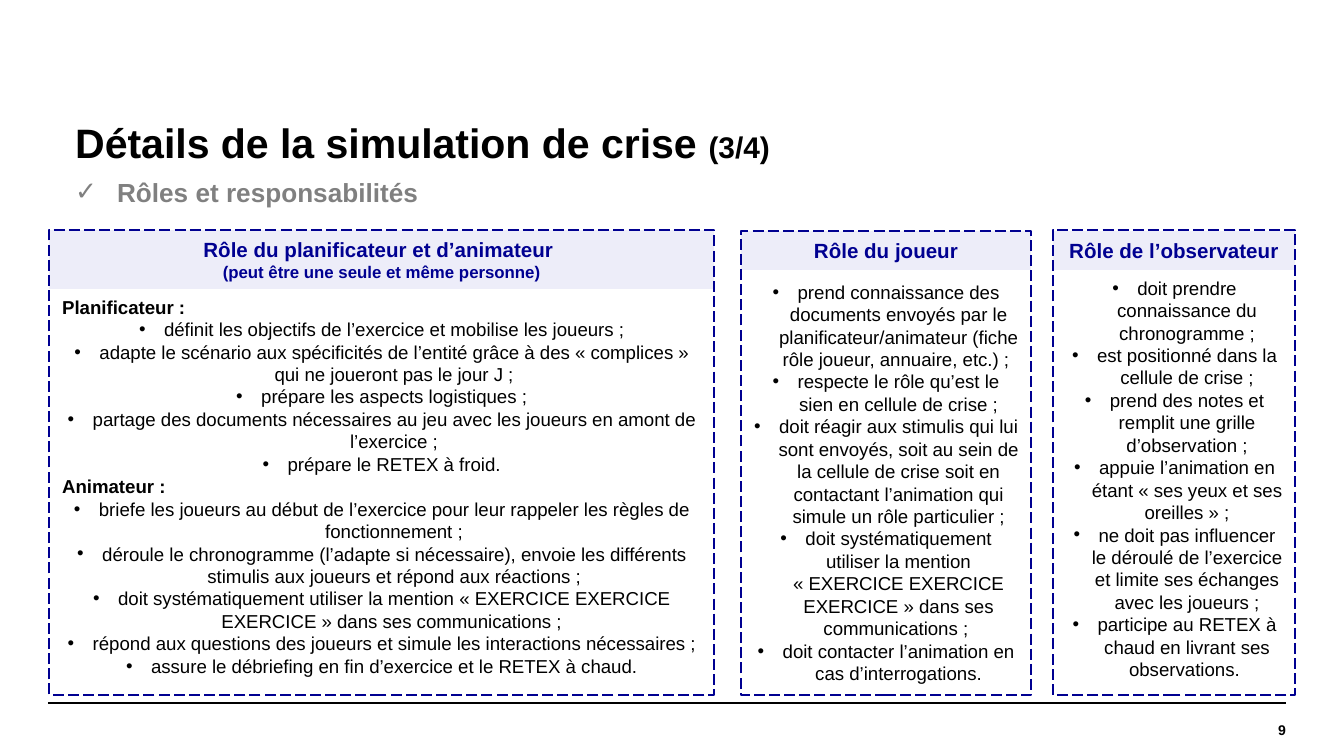
from dataclasses import dataclass

from lxml.etree import SubElement
from pptx import Presentation
from pptx.dml.color import RGBColor
from pptx.enum.dml import MSO_LINE
from pptx.enum.shapes import MSO_CONNECTOR, MSO_SHAPE
from pptx.enum.text import MSO_ANCHOR, PP_ALIGN
from pptx.oxml.ns import qn
from pptx.util import Emu, Pt

BLACK = RGBColor(0x00, 0x00, 0x00)
GREY = RGBColor(0x80, 0x80, 0x80)
NAVY = RGBColor(0x00, 0x00, 0x91)
LAVENDER = RGBColor(0xED, 0xED, 0xF9)
FONT = "Arial"
EMU_PER_PX = 914400 / 134.4
BULLET_INDENT = 25
NO_BREAK_SPACE = chr(160)


def quoted(text: str) -> str:
    """French quotation marks, kept on the line of the words they enclose."""
    return f"«{NO_BREAK_SPACE}{text}{NO_BREAK_SPACE}»"


MENTION_DUTY = (
    f"doit systématiquement utiliser la mention {quoted('EXERCICE EXERCICE EXERCICE')} "
    "dans ses communications ; "
)


@dataclass
class Run:
    text: str
    size: float
    color: RGBColor = BLACK
    bold: bool = True


@dataclass
class Box:
    left: int
    top: int
    width: int
    height: int


@dataclass
class Role:
    frame: Box
    header: Box
    body: Box
    titles: list[Run]
    sections: list[tuple[str, list[str]]]  # heading (may be empty), duties


ROLES = [
    Role(
        Box(49, 230, 665, 465), Box(49, 230, 665, 59), Box(49, 289, 665, 398),
        [Run("Rôle du planificateur et d’animateur ", 11, NAVY),
         Run("(peut être une seule et même personne)", 9, NAVY)],
        [("Planificateur :", [
            "définit les objectifs de l’exercice et mobilise les joueurs ;",
            "adapte le scénario aux spécificités de l’entité grâce à des "
            f"{quoted('complices')} qui ne joueront pas le jour J ;",
            "prépare les aspects logistiques ;",
            "partage des documents nécessaires au jeu avec les joueurs en amont de l’exercice ;",
            "prépare le RETEX à froid.",
        ]), ("Animateur :", [
            "briefe les joueurs au début de l’exercice pour leur rappeler les règles de fonctionnement ;",
            "déroule le chronogramme (l’adapte si nécessaire), envoie les différents stimulis aux joueurs "
            "et répond aux réactions ;",
            MENTION_DUTY,
            "répond aux questions des joueurs et simule les interactions nécessaires ;",
            "assure le débriefing en fin d’exercice et le RETEX à chaud.",
        ])],
    ),
    Role(
        Box(741, 231, 290, 464), Box(741, 231, 290, 39), Box(740, 274, 292, 421),
        [Run("Rôle du joueur", 11, NAVY)],
        [("", [
            "prend connaissance des documents envoyés par le planificateur/animateur "
            "(fiche rôle joueur, annuaire, etc.) ; ",
            "respecte le rôle qu’est le sien en cellule de crise ;",
            "doit réagir aux stimulis qui lui sont envoyés, soit au sein de la cellule de crise soit en "
            "contactant l’animation qui simule un rôle particulier ;",
            MENTION_DUTY,
            "doit contacter l’animation en cas d’interrogations.",
        ])],
    ),
    Role(
        Box(1053, 230, 242, 465), Box(1053, 231, 242, 39), Box(1053, 270, 243, 421),
        [Run("Rôle de l’observateur", 11, NAVY)],
        [("", [
            "doit prendre connaissance du chronogramme ;",
            "est positionné dans la cellule de crise ;",
            "prend des notes et remplit une grille d’observation ;",
            f"appuie l’animation en étant {quoted('ses yeux et ses oreilles')} ;",
            "ne doit pas influencer le déroulé de l’exercice et limite ses échanges avec les joueurs ;",
            "participe au RETEX à chaud en livrant ses observations. ",
        ])],
    ),
]


def px(length: int) -> Emu:
    return Emu(round(length * EMU_PER_PX))


def place(box: Box) -> tuple[Emu, Emu, Emu, Emu]:
    return px(box.left), px(box.top), px(box.width), px(box.height)


def add_frame(slide, box: Box, anchor=MSO_ANCHOR.TOP, margins: bool = True):
    frame = slide.shapes.add_textbox(*place(box)).text_frame
    frame.word_wrap = True
    frame.vertical_anchor = anchor
    if not margins:
        frame.margin_left = frame.margin_right = frame.margin_top = frame.margin_bottom = 0
    return frame


def add_paragraph(frame, runs: list[Run], align=PP_ALIGN.LEFT):
    """Fill the first paragraph if it is still empty, otherwise add one."""
    first = frame.paragraphs[0]
    paragraph = frame.add_paragraph() if first.runs else first
    paragraph.alignment = align
    for item in runs:
        run = paragraph.add_run()
        run.text = item.text
        run.font.name = FONT
        run.font.size = Pt(item.size)
        run.font.bold = item.bold
        run.font.color.rgb = item.color
    return paragraph


def add_bullet(paragraph, character: str, margin: int, hanging: int) -> None:
    properties = paragraph._p.get_or_add_pPr()
    properties.set("marL", str(px(margin)))
    properties.set("indent", str(-px(hanging)))
    SubElement(properties, qn("a:buFont")).set("typeface", FONT)
    SubElement(properties, qn("a:buChar")).set("char", character)


def add_header(slide, role: Role) -> None:
    shape = slide.shapes.add_shape(MSO_SHAPE.RECTANGLE, *place(role.header))
    shape.shadow.inherit = False
    shape.fill.solid()
    shape.fill.fore_color.rgb = LAVENDER
    shape.line.fill.background()
    shape.text_frame.word_wrap = True
    shape.text_frame.vertical_anchor = MSO_ANCHOR.TOP
    for title in role.titles:
        add_paragraph(shape.text_frame, [title], PP_ALIGN.CENTER)


def add_border(slide, role: Role) -> None:
    shape = slide.shapes.add_shape(MSO_SHAPE.RECTANGLE, *place(role.frame))
    shape.shadow.inherit = False
    shape.fill.background()
    shape.line.color.rgb = NAVY
    shape.line.width = Pt(0.75)
    shape.line.dash_style = MSO_LINE.LONG_DASH


def add_duties(slide, role: Role) -> None:
    frame = add_frame(slide, role.body)
    for heading, duties in role.sections:
        if heading:
            add_paragraph(frame, [Run(heading, 10)])
        for duty in duties:
            paragraph = add_paragraph(frame, [Run(duty, 10, bold=False)], PP_ALIGN.CENTER)
            add_bullet(paragraph, "•", BULLET_INDENT, BULLET_INDENT)


def add_rule(slide, left: int, right: int, top: int) -> None:
    line = slide.shapes.add_connector(MSO_CONNECTOR.STRAIGHT, px(left), px(top), px(right), px(top))
    line.line.color.rgb = BLACK
    line.line.width = Pt(0.8)
    SubElement(line._element.spPr, qn("a:effectLst"))


def main() -> None:
    presentation = Presentation()
    presentation.slide_width, presentation.slide_height = px(1344), px(756)
    slide = presentation.slides.add_slide(presentation.slide_layouts[6])

    # Footer rule and page number
    add_rule(slide, 48, 1286, 703)
    number = add_frame(slide, Box(1087, 703, 199, 53), MSO_ANCHOR.MIDDLE, margins=False)
    add_paragraph(number, [Run("9", 7.5)], PP_ALIGN.RIGHT)

    # Title and subtitle
    title = add_frame(slide, Box(59, 106, 1238, 79), MSO_ANCHOR.MIDDLE)
    paragraph = add_paragraph(title, [Run("Détails de la simulation de crise ", 22), Run("(3/4)", 16)])
    paragraph.line_spacing = 0.9
    paragraph._p.get_or_add_pPr().set("marL", str(px(3)))
    subtitle = add_frame(slide, Box(74, 176, 1238, 36), margins=False)
    paragraph = add_paragraph(subtitle, [Run("Rôles et responsabilités", 14, GREY)])
    add_bullet(paragraph, "✓", 43, 42)

    # Role columns
    for draw in (add_header, add_border, add_duties):
        for role in ROLES:
            draw(slide, role)

    presentation.save("out.pptx")


if __name__ == "__main__":
    main()
